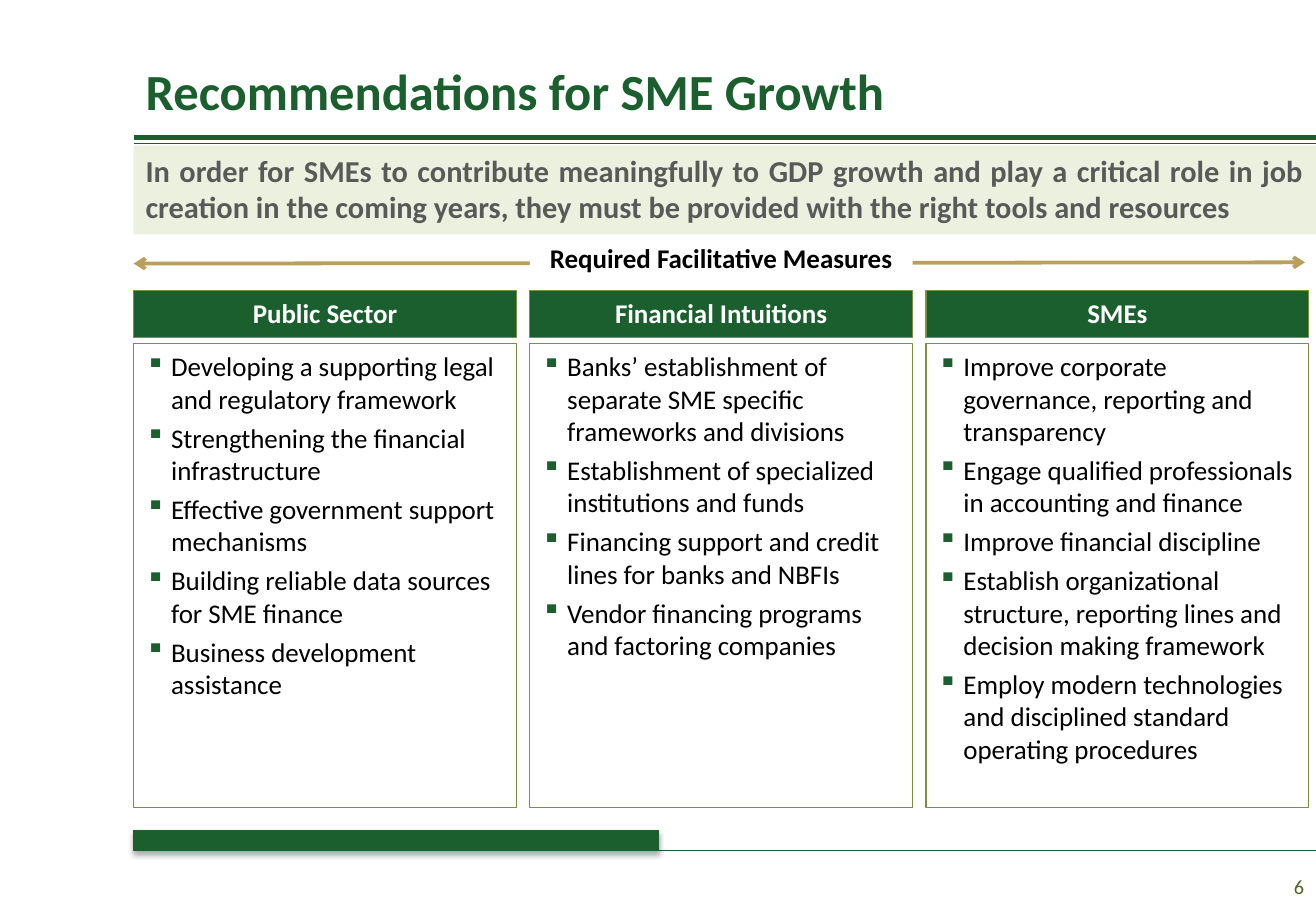
from dataclasses import dataclass

from lxml import etree
from pptx import Presentation
from pptx.dml.color import RGBColor
from pptx.enum.shapes import MSO_CONNECTOR, MSO_SHAPE
from pptx.enum.text import MSO_ANCHOR, PP_ALIGN
from pptx.oxml.ns import qn
from pptx.util import Inches, Pt

RECT = MSO_SHAPE.RECTANGLE
LINE = MSO_CONNECTOR.STRAIGHT
TOP, MIDDLE = MSO_ANCHOR.TOP, MSO_ANCHOR.MIDDLE
LEFT, CENTER = PP_ALIGN.LEFT, PP_ALIGN.CENTER
RIGHT, JUSTIFY = PP_ALIGN.RIGHT, PP_ALIGN.JUSTIFY


@dataclass(frozen=True)
class Theme:
    font: str = "Calibri"
    green: str = "1B5F2E"
    olive: str = "77933C"
    dark: str = "4F6228"
    pale: str = "EBF1DE"
    gold: str = "B99E5E"
    gray: str = "595959"
    black: str = "000000"
    white: str = "FFFFFF"
    title: int = 30
    lead: int = 18
    body: int = 16
    small: int = 12


T = Theme()
WIDTH, HEIGHT = 10.83, 7.5
EDGE = 1.1          # left edge of all content
GAP = 0.11          # between columns
COL = 3.15          # column width

COLUMNS = [
    ("Public Sector", [
        "Developing a supporting legal and regulatory framework",
        "Strengthening the financial infrastructure",
        "Effective government support mechanisms",
        "Building reliable data sources for SME finance",
        "Business development assistance",
    ]),
    ("Financial Intuitions", [
        "Banks’ establishment of separate SME specific frameworks and divisions",
        "Establishment of specialized institutions and funds",
        "Financing support and credit lines for banks and NBFIs",
        "Vendor financing programs and factoring companies",
    ]),
    ("SMEs", [
        "Improve corporate governance, reporting and transparency",
        "Engage qualified professionals in accounting and finance",
        "Improve financial discipline",
        "Establish organizational structure, reporting lines and decision making framework",
        "Employ modern technologies and disciplined standard operating procedures",
    ]),
]


def color(code):
    return RGBColor.from_string(code)


def add_bullet(para):
    props = para._p.get_or_add_pPr()
    props.set("marL", str(Inches(0.31 - 0.1)))
    props.set("indent", str(-Inches(0.31 - 0.1)))
    tint = etree.SubElement(props, qn("a:buClr"))
    etree.SubElement(tint, qn("a:srgbClr"), val=T.green)
    etree.SubElement(props, qn("a:buChar"), char="▪")


def write(shape, *lines, size=T.body, ink=T.black, bold=False,
          align=LEFT, anchor=TOP, bullet=False):
    frame = shape.text_frame
    frame.word_wrap = True
    frame.vertical_anchor = anchor
    for i, line in enumerate(lines):
        para = frame.add_paragraph() if i else frame.paragraphs[0]
        para.alignment = align
        if i:
            para.space_before = Pt(3.9)
        if bullet:
            add_bullet(para)
        run = para.add_run()
        run.text = line
        run.font.name = T.font
        run.font.size = Pt(size)
        run.font.bold = bold
        run.font.color.rgb = color(ink)


def add_rect(slide, box, fill=None, line=None):
    shape = slide.shapes.add_shape(RECT, *map(Inches, box))
    shape.shadow.inherit = False
    if fill:
        shape.fill.solid()
        shape.fill.fore_color.rgb = color(fill)
    else:
        shape.fill.background()
    if line:
        shape.line.color.rgb = color(line)
        shape.line.width = Pt(0.75)
    else:
        shape.line.fill.background()
    return shape


def add_line(slide, start, end, ink, width, heads=False):
    link = slide.shapes.add_connector(LINE, *map(Inches, start + end))
    link.line.color.rgb = color(ink)
    link.line.width = Pt(width)
    if heads:
        stroke = link.line._get_or_add_ln()
        for tag in ("a:headEnd", "a:tailEnd"):
            etree.SubElement(stroke, qn(tag), type="arrow")
    etree.SubElement(link._element.spPr, qn("a:effectLst"))


def add_shadow(shape):
    effects = shape._element.spPr.find(qn("a:effectLst"))
    outer = etree.SubElement(effects, qn("a:outerShdw"), blurRad=str(Pt(3.1)),
                             dist=str(Pt(1.8)), dir="5400000", rotWithShape="0")
    tint = etree.SubElement(outer, qn("a:srgbClr"), val=T.black)
    etree.SubElement(tint, qn("a:alpha"), val="35000")


def add_footer(slide, left, top):
    # Thin rule with a short bar on it, page number below
    add_line(slide, (left, top + 0.16), (WIDTH, top + 0.16), T.green, 0.25)
    add_shadow(add_rect(slide, (left, top, 4.32, 0.16), T.green, T.green))
    page = slide.shapes.add_textbox(*map(Inches, (8.3, top + 0.26, 2.53, 0.4)))
    write(page, "6", size=T.small, ink=T.dark, align=RIGHT, anchor=MIDDLE)


def add_header(slide, left, top, width):
    # Title over a thick and a thin rule
    for drop, weight in ((0.83, 3), (0.88, 0.25)):
        add_line(slide, (left, top + drop), (WIDTH, top + drop), T.green, weight)
    title = slide.shapes.add_textbox(*map(Inches, (left, top, width, 0.88)))
    write(title, "Recommendations for SME Growth", size=T.title,
          ink=T.green, bold=True, anchor=MIDDLE)
    # Lead statement
    lead = add_rect(slide, (left, top + 0.9, width, 0.73), T.pale)
    write(lead, "In order for SMEs to contribute meaningfully to GDP growth and "
          "play a critical role in job creation in the coming years, they must "
          "be provided with the right tools and resources",
          size=T.lead, ink=T.gray, bold=True, align=JUSTIFY)


def add_span(slide, left, top, width):
    # Two-headed arrow behind its label
    add_line(slide, (left, top + 0.23), (left + width, top + 0.22),
             T.gold, 2.25, heads=True)
    label = add_rect(slide, (left + COL + GAP, top, COL, 0.28), T.white)
    write(label, "Required Facilitative Measures", bold=True, align=CENTER)


def add_column(slide, left, top, head, items):
    cap = add_rect(slide, (left, top, COL, 0.39), T.green, T.olive)
    write(cap, head, ink=T.white, bold=True, align=CENTER)
    body = add_rect(slide, (left, top + 0.44, COL, 3.82), line=T.olive)
    write(body, *items, bullet=True)


def main():
    deck = Presentation()
    deck.slide_width, deck.slide_height = Inches(WIDTH), Inches(HEIGHT)
    slide = deck.slides.add_slide(deck.slide_layouts[6])
    add_footer(slide, EDGE, 6.84)
    add_header(slide, EDGE, 0.3, WIDTH - EDGE)
    add_span(slide, EDGE, 1.94, 9.64)
    for i, (head, items) in enumerate(COLUMNS):
        add_column(slide, EDGE + i * (COL + GAP), 2.39, head, items)
    deck.save("out.pptx")


if __name__ == "__main__":
    main()
